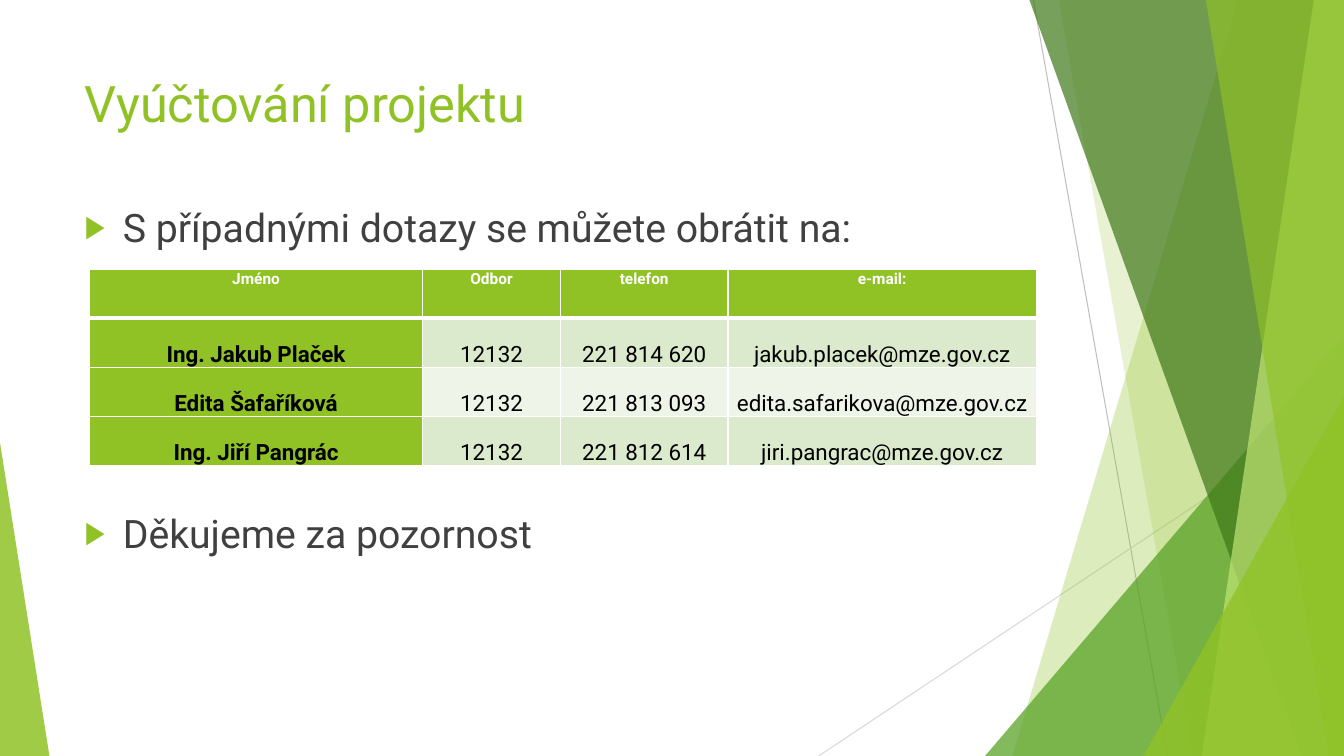
from lxml import etree
from pptx import Presentation
from pptx import util as u
from pptx.dml.color import RGBColor
from pptx.enum import shapes, text
from pptx.oxml import ns

GREEN, WHITE, BLACK, GREY = "90C226", "FFFFFF", "000000", "404040"
FONT = "Roboto"
WIDTH, HEIGHT = 13.33, 7.5
HEADER = ["Jméno", "Odbor", "telefon", "e-mail:"]
CONTACTS = [
    ["Ing. Jakub Plaček", "12132", "221 814 620", "jakub.placek@mze.gov.cz"],
    ["Edita Šafaříková", "12132", "221 813 093", "edita.safarikova@mze.gov.cz"],
    ["Ing. Jiří Pangrác", "12132", "221 812 614", "jiri.pangrac@mze.gov.cz"],
]


def color(value):
    """Turn a hex string into a colour."""
    return RGBColor.from_string(value)


def inches(*values):
    """Turn numbers of inches into lengths."""
    return [u.Inches(value) for value in values]


def assign(target, values):
    """Set every attribute named in the dict."""
    for name, value in values.items():
        setattr(target, name, value)


def add_node(parent, tag, **attributes):
    """Append a drawing element to its parent."""
    return etree.SubElement(parent, ns.qn(tag), attributes)


def write(para, words, size, ink, bold=False):
    """Add one formatted span to a paragraph."""
    span = para.add_run()
    span.text = words
    assign(span.font, {"name": FONT, "size": u.Pt(size), "bold": bold})
    span.font.color.rgb = color(ink)


def tint(shape, fill, opacity):
    """Give a shape a see-through fill without outline or shadow."""
    shape.shadow.inherit = False
    shape.fill.solid()
    shape.fill.fore_color.rgb = color(fill)
    shape.line.fill.background()
    solid = shape.fill._xPr.find(ns.qn("a:solidFill"))
    add_node(solid[0], "a:alpha", val=str(opacity * 1000))


def add_ray(page, start, end, ink):
    """Draw one thin background line."""
    ray = page.shapes.add_connector(shapes.MSO_CONNECTOR.STRAIGHT, *inches(*start, *end))
    ray.line.color.rgb = color(ink)
    ray.line.width = u.Pt(0.75)
    add_node(ray._element.spPr, "a:effectLst")


def add_shard(page, top_left, bottom_left, fill, opacity):
    """Draw a full-height shard that reaches the right edge."""
    builder = page.shapes.build_freeform(*inches(top_left, 0))
    corners = [(WIDTH, 0), (WIDTH, HEIGHT), (bottom_left, HEIGHT)]
    builder.add_line_segments([inches(*corner) for corner in corners])
    tint(builder.convert_to_shape(), fill, opacity)


def add_corner(page, left, top, width, peak, fill, opacity):
    """Draw a triangle that stands on the bottom edge."""
    corner = page.shapes.add_shape(
        shapes.MSO_SHAPE.ISOSCELES_TRIANGLE, *inches(left, top, width, HEIGHT - top))
    corner.adjustments[0] = peak
    tint(corner, fill, opacity)


def add_backdrop(page):
    """Layer the green facets along the slide edges."""
    add_ray(page, (10.25, 0), (11.58, HEIGHT), "BFBFBF")
    add_ray(page, (WIDTH, 4.03), (8.12, HEIGHT), "D9D9D9")
    add_shard(page, 12.28, 10.04, GREEN, 30)
    add_shard(page, 10.5, 11.83, GREEN, 20)
    add_corner(page, 9.77, 3.33, 3.56, 1, "54A021", 72)
    add_shard(page, 10.21, 12.91, "3F7819", 70)
    add_shard(page, 13.03, 11.92, "C0E474", 70)
    add_shard(page, 11.96, 13.18, GREEN, 65)
    add_corner(page, 11.34, 3.93, 1.99, 1, GREEN, 80)
    add_corner(page, 0, 4.39, 0.49, 0, GREEN, 85)


def add_title(page, box, words):
    """Place the slide title in its box."""
    frame = page.shapes.add_textbox(*inches(*box)).text_frame
    frame.word_wrap = True
    write(frame.paragraphs[0], words, 36, GREEN)


def add_bullets(page, box, items, gap):
    """Place arrow bullets with a gap in points between them."""
    frame = page.shapes.add_textbox(*inches(*box)).text_frame
    frame.word_wrap = True
    for index, words in enumerate(items):
        para = frame.add_paragraph() if index else frame.paragraphs[0]
        if index:
            para.space_before = u.Pt(gap)
        write(para, words, 28, GREY)
        props = para._p.get_or_add_pPr()
        indent = u.Inches(0.38)
        props.set("marL", str(indent))
        props.set("indent", str(-indent))
        add_node(add_node(props, "a:buClr"), "a:srgbClr", val=GREEN)
        add_node(props, "a:buSzPct", val="80000")
        add_node(props, "a:buFont", typeface=FONT)
        add_node(props, "a:buChar", char="▶")


def add_borders(cell, bottom, top):
    """Draw white borders with the given widths in points."""
    props = cell._tc.get_or_add_tcPr()
    widths = {"a:lnL": 1, "a:lnR": 1, "a:lnT": top, "a:lnB": bottom}
    for index, (tag, width) in enumerate(widths.items()):
        border = add_node(props, tag, w=str(u.Pt(width)))
        add_node(add_node(border, "a:solidFill"), "a:srgbClr", val=WHITE)
        props.insert(index, border)


def add_contacts(page, box, columns):
    """Place the contact table with equal rows in its box."""
    rows = [HEADER] + CONTACTS
    table = page.shapes.add_table(len(rows), len(columns), *inches(*box)).table
    for column, width in zip(table.columns, columns):
        column.width = u.Inches(width)
    for r, row in enumerate(rows):
        table.rows[r].height = u.Inches(box[3] / len(rows))
        for c, words in enumerate(row):
            cell = table.cell(r, c)
            anchor = text.MSO_ANCHOR.BOTTOM if r else text.MSO_ANCHOR.TOP
            side = u.Inches(0.07)
            assign(cell, {"margin_left": side, "margin_right": side, "margin_top": 0,
                          "margin_bottom": 0, "vertical_anchor": anchor})
            is_head = r == 0 or c == 0
            cell.fill.solid()
            cell.fill.fore_color.rgb = color(
                GREEN if is_head else "DBE9CD" if r % 2 else "EEF4E8")
            add_borders(cell, bottom=1 if r else 3, top=3 if r == 1 else 1)
            para = cell.text_frame.paragraphs[0]
            assign(para, {"alignment": text.PP_ALIGN.CENTER, "line_spacing": 1.07})
            write(para, words, 16 if r else 11, BLACK if r else WHITE, is_head)


def main():
    """Build and save the slide."""
    deck = Presentation()
    assign(deck, {"slide_width": u.Inches(WIDTH), "slide_height": u.Inches(HEIGHT)})
    page = deck.slides.add_slide(deck.slide_layouts[6])
    add_backdrop(page)
    add_title(page, (0.74, 0.67, 9.4, 1.44), "Vyúčtování projektu")
    add_bullets(page, (0.74, 1.97, 9.4, 4.64),
                ["S případnými dotazy se můžete obrátit na:", "Děkujeme za pozornost"], 185)
    add_contacts(page, (0.89, 2.67, 9.4, 1.95), [3.3, 1.37, 1.66, 3.06])
    deck.save("out.pptx")


if __name__ == "__main__":
    main()
